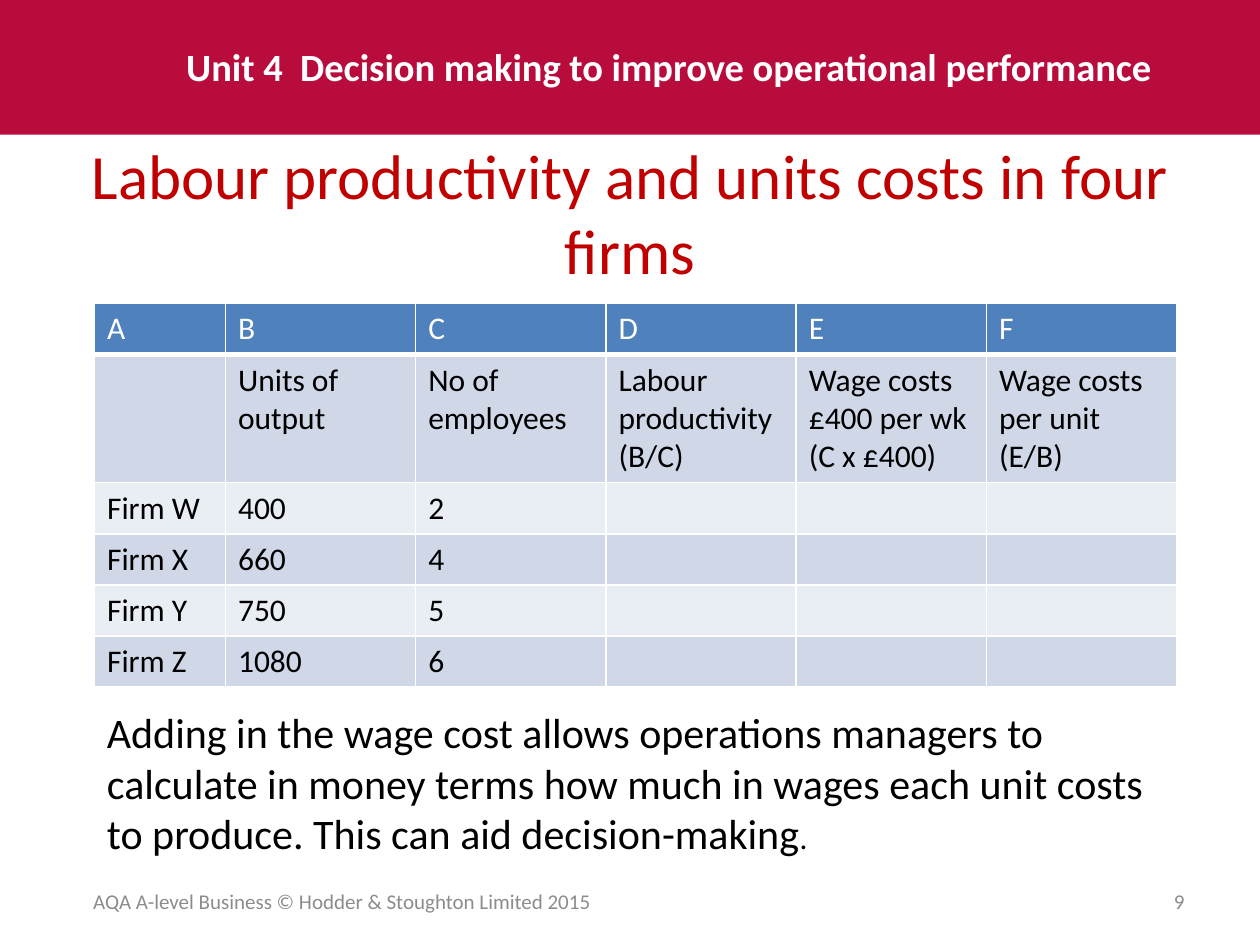
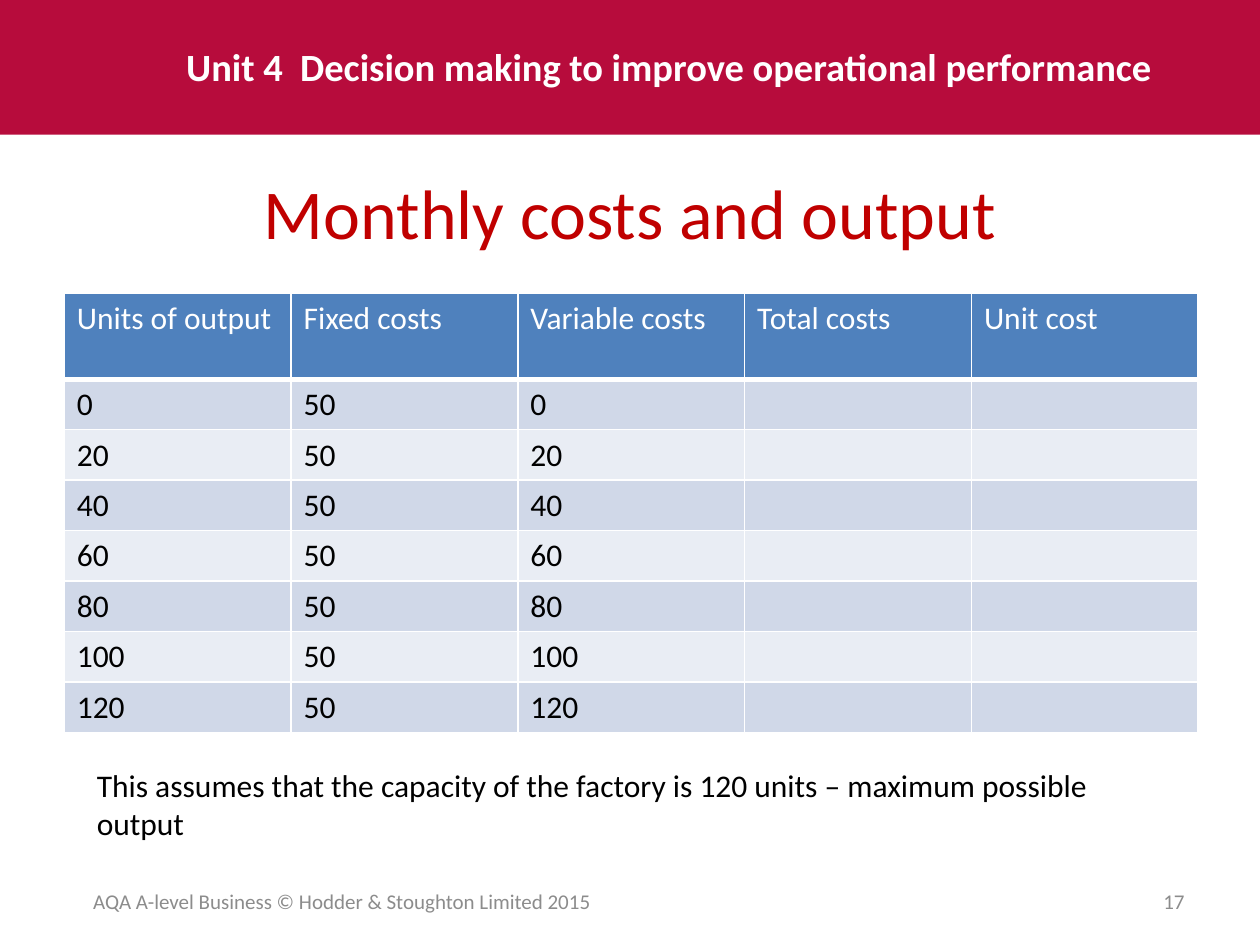
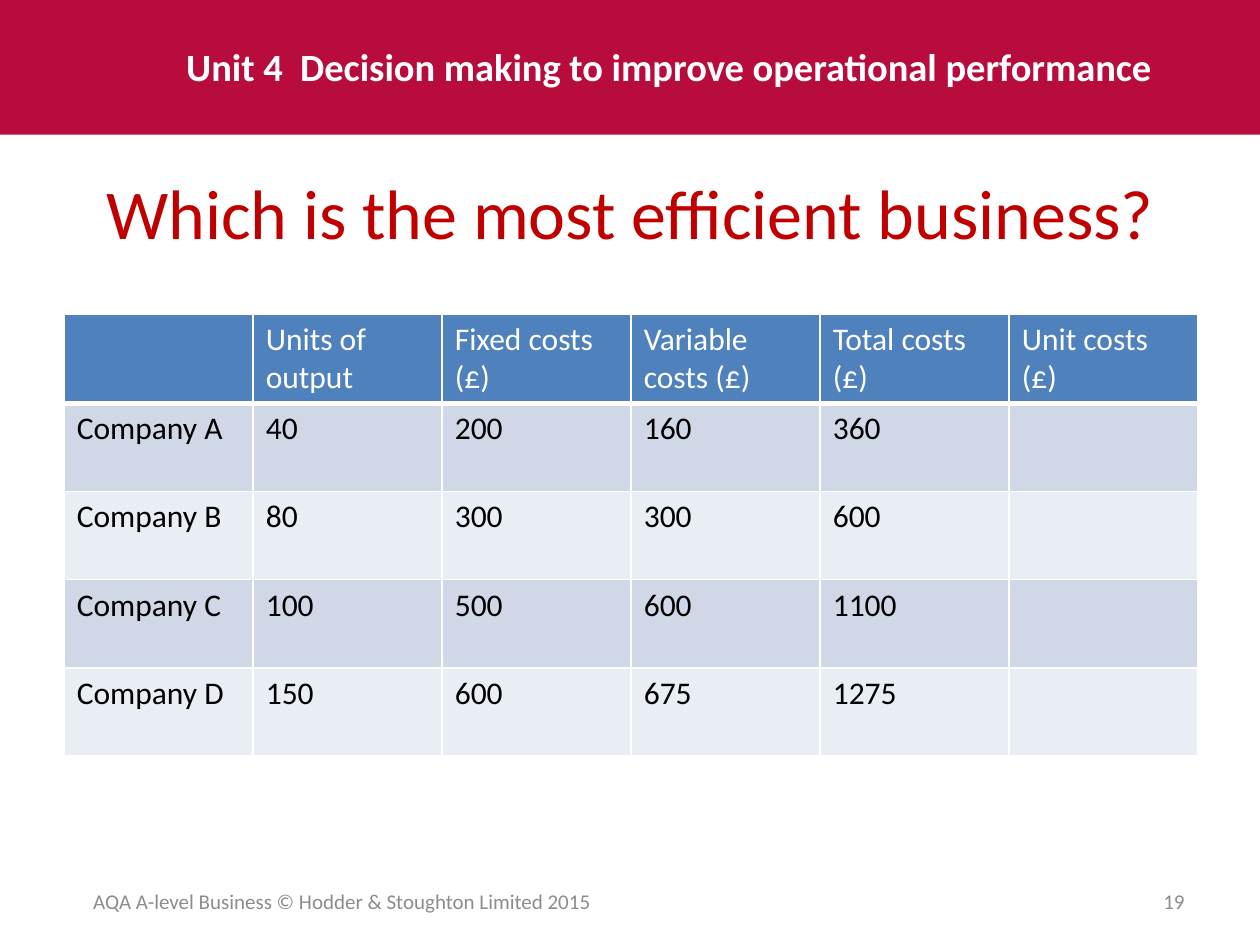
"""Build three business slides with cost tables under a shared unit band."""
import pptx
import pptx.dml.color
import pptx.enum.shapes
import pptx.enum.text
import pptx.oxml
import pptx.oxml.ns
import pptx.util

Inches = pptx.util.Inches
Pt = pptx.util.Pt
ALIGN = pptx.enum.text.PP_ALIGN
ANCHOR = pptx.enum.text.MSO_ANCHOR

COLORS = {
    "band": "B70C3C",
    "title": "C00000",
    "header": "4F81BD",
    "odd": "D0D8E8",
    "even": "E9EDF4",
    "white": "FFFFFF",
    "text": "000000",
    "footer": "8C8C8C",
}
FORMATS = {
    "unit": {"size": Pt(22), "bold": True, "color": "white"},
    "title": {"size": Pt(40), "color": "title"},
    "long title": {"size": Pt(36), "color": "title"},
    "note": {"size": Pt(18), "color": "text"},
    "large note": {"size": Pt(24), "color": "text"},
    "footer": {"size": Pt(12), "color": "footer"},
    "header": {"size": Pt(18), "bold": False, "color": "white"},
    "cell": {"size": Pt(18), "bold": False, "color": "text"},
}
FONT = "Calibri"
UNIT = "Unit 4  Decision making to improve operational performance"
COPYRIGHT = "AQA A-level Business © Hodder & Stoughton Limited 2015"
BORDERS = {"lnL": 1, "lnR": 1, "lnT": 1, "lnB": 3}


def rgb(name):
    return pptx.dml.color.RGBColor.from_string(COLORS[name])


def format_run(r, style):
    r.font.name = FONT
    for key, value in FORMATS[style].items():
        if key == "color":
            r.font.color.rgb = rgb(value)
        else:
            setattr(r.font, key, value)


def add_run(p, text, style):
    r = p.add_run()
    r.text = text
    format_run(r, style)


def place(sp, box):
    for key, value in zip(("left", "top", "width", "height"), box):
        setattr(sp, key, Inches(value))


def add_text(s, box, runs, align=ALIGN.LEFT, anchor=ANCHOR.TOP):
    sp = s.shapes.add_textbox(*map(Inches, box))
    tf = sp.text_frame
    tf.word_wrap = True
    tf.vertical_anchor = anchor
    p = tf.paragraphs[0]
    p.alignment = align
    for text, style in runs:
        add_run(p, text, style)
    return sp


def add_band(s):
    sp = s.shapes.add_shape(
        pptx.enum.shapes.MSO_SHAPE.RECTANGLE, 0, 0, Inches(10), Inches(1.07)
    )
    sp.shadow.inherit = False
    sp.fill.solid()
    sp.fill.fore_color.rgb = rgb("band")
    sp.line.fill.background()
    return sp


def set_up_layout(layout, s):
    place(layout.placeholders[0], (0.51, 1.15, 8.98, 1.06))
    band = add_band(s)
    unit = add_text(s, (1.38, 0.29, 8.03, 0.47), [(UNIT, "unit")])
    for i, sp in enumerate((band, unit)):
        sp.element.xpath(".//p:cNvPr")[0].set("id", str(100 + i))
        layout.shapes.element.insert(2 + i, sp.element)


def add_title(s, text, style="title"):
    tf = s.shapes.title.text_frame
    tf.auto_size = pptx.enum.text.MSO_AUTO_SIZE.NONE
    tf.vertical_anchor = ANCHOR.MIDDLE
    p = tf.paragraphs[0]
    p.alignment = ALIGN.CENTER
    add_run(p, text, style)


def add_footer(s, number):
    add_text(s, (0.51, 6.95, 4.41, 0.4), [(COPYRIGHT, "footer")],
             ALIGN.CENTER, ANCHOR.MIDDLE)
    add_text(s, (7.17, 6.95, 2.33, 0.4), [(str(number), "footer")],
             ALIGN.RIGHT, ANCHOR.MIDDLE)


def add_borders(cell):
    tc_pr = cell._tc.get_or_add_tcPr()
    for tag, width in BORDERS.items():
        tc_pr.append(pptx.oxml.parse_xml(
            f'<a:{tag} {pptx.oxml.ns.nsdecls("a")} w="{Pt(width)}"><a:solidFill>'
            f'<a:srgbClr val="{COLORS["white"]}"/></a:solidFill></a:{tag}>'
        ))


def fill_cell(cell, text, row):
    if row == 0:
        add_borders(cell)
    cell.fill.solid()
    cell.fill.fore_color.rgb = rgb(
        "header" if row == 0 else "odd" if row % 2 else "even"
    )
    cell.text = str(text)
    for p in cell.text_frame.paragraphs:
        for r in p.runs:
            format_run(r, "header" if row == 0 else "cell")


def add_cost_table(s, left, top, widths, heights, rows):
    table = s.shapes.add_table(
        len(rows), len(widths), Inches(left), Inches(top),
        Inches(sum(widths)), Inches(sum(heights))
    ).table
    for column, width in zip(table.columns, widths):
        column.width = Inches(width)
    for i, (height, values) in enumerate(zip(heights, rows)):
        table.rows[i].height = Inches(height)
        for j in range(len(widths)):
            fill_cell(table.cell(i, j), values[j] if j < len(values) else "", i)


def add_productivity_slide(s):
    add_title(s, "Labour productivity and units costs in four firms", "long title")
    rows = [
        "ABCDEF",
        ("", "Units of output", "No of employees", "Labour productivity\n(B/C)",
         "Wage costs £400 per wk\n(C x £400)", "Wage costs per unit\n(E/B)"),
        ("Firm W", 400, 2),
        ("Firm X", 660, 4),
        ("Firm Y", 750, 5),
        ("Firm Z", 1080, 6),
    ]
    add_cost_table(s, 0.75, 2.41, [1.04] + [1.51] * 5,
                   [0.39, 0.97] + [0.39] * 4, rows)
    note = ("Adding in the wage cost allows operations managers to calculate in "
            "money terms how much in wages each unit costs to produce. "
            "This can aid decision-making")
    add_text(s, (0.75, 5.56, 8.58, 1.31), [(note, "large note"), (".", "note")])
    add_footer(s, 9)


def add_monthly_costs_slide(s):
    add_title(s, "Monthly costs and output")
    note = ("This assumes that the capacity of the factory is 120 units – "
            "maximum possible output")
    add_text(s, (0.67, 6.03, 8.74, 0.71), [(note, "note")])
    rows = [("Units of output", "Fixed costs", "Variable costs",
             "Total costs", "Unit cost")]
    rows += [(units, 50, units) for units in range(0, 121, 20)]
    add_cost_table(s, 0.51, 2.33, [1.8] * 5, [0.68] + [0.4] * 7, rows)
    add_footer(s, 17)


def add_efficiency_slide(s):
    add_title(s, "Which is the most efficient business?")
    rows = [
        ("", "Units of output", "Fixed costs (£)", "Variable costs (£)",
         "Total costs (£)", "Unit costs (£)"),
        ("Company A", 40, 200, 160, 360),
        ("Company B", 80, 300, 300, 600),
        ("Company C", 100, 500, 600, 1100),
        ("Company D", 150, 600, 675, 1275),
    ]
    add_cost_table(s, 0.51, 2.49, [1.5] * 6, [0.7] * 5, rows)
    add_footer(s, 19)


def main():
    prs = pptx.Presentation()
    prs.slide_width, prs.slide_height = Inches(10), Inches(7.5)
    layout = prs.slide_layouts.get_by_name("Title Only")
    builders = (add_productivity_slide, add_monthly_costs_slide, add_efficiency_slide)
    for i, build in enumerate(builders):
        s = prs.slides.add_slide(layout)
        if i == 0:
            set_up_layout(layout, s)
        build(s)
    prs.save("out.pptx")


if __name__ == "__main__":
    main()
